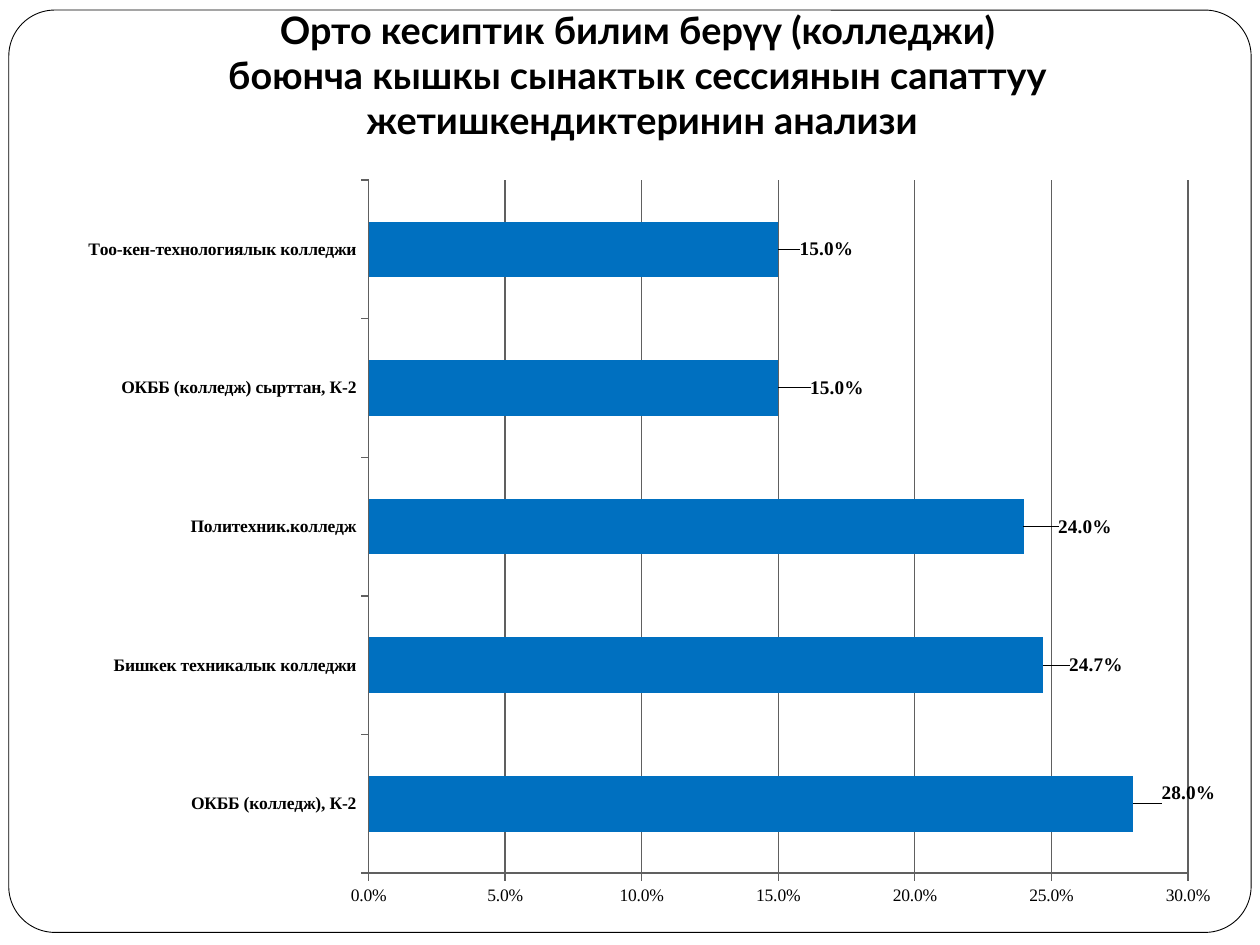
from dataclasses import dataclass

from lxml import etree
from pptx import Presentation
from pptx import util as u
from pptx.chart.data import CategoryChartData
from pptx.dml.color import RGBColor
from pptx.enum import chart as charts, shapes, text
from pptx.oxml.ns import qn

WIDTH, HEIGHT = 10, 7.5
PERCENT = "0.0%"
TITLE = ("Орто кесиптик билим берүү (колледжи)",
         "боюнча кышкы сынактык сессиянын сапаттуу",
         " жетишкендиктеринин анализи")
# College, share, label shift (x, y) as shares of the chart
RESULTS = (
    ("ОКББ (колледж), К-2", 0.28, (0.02, -0.015)),
    ("Бишкек техникалык колледжи", 0.247, (0.018, 0)),
    ("Политехник.колледж", 0.24, (0.025, 0)),
    ("ОКББ (колледж) сырттан, К-2", 0.15, (0.023, 0)),
    ("Тоо-кен-технологиялык колледжи", 0.15, (0.014, 0)),
)


@dataclass(frozen=True)
class Theme:
    ink: RGBColor = RGBColor(0, 0, 0)
    paper: RGBColor = RGBColor(255, 255, 255)
    bar: RGBColor = RGBColor(0x00, 0x70, 0xC0)
    grid: RGBColor = RGBColor(0x60, 0x60, 0x60)
    title_font: str = "Lato"
    chart_font: str = "Times New Roman"
    title_size: float = 21.6
    axis_size: float = 10
    label_size: float = 11


THEME = Theme()


def apply(target, values):
    for name, value in values.items():
        setattr(target, name, value)


def box_at(left, top, width, height):
    return dict(zip(("left", "top", "width", "height"),
                    map(u.Inches, (left, top, width, height))))


def style_font(font, name, size, bold):
    apply(font, {"name": name, "size": u.Pt(size), "bold": bold})
    font.color.rgb = THEME.ink


def style_line(line, color, width):
    line.color.rgb = color
    line.width = u.Pt(width)


def add_frame(slide):
    """Put the rounded border behind everything else."""
    frame = slide.shapes.add_shape(shapes.MSO_SHAPE.ROUNDED_RECTANGLE,
                                   **box_at(0.07, 0.08, 9.86, 7.32))
    frame.adjustments[0] = 0.05
    frame.shadow.inherit = False
    frame.fill.solid()
    frame.fill.fore_color.rgb = THEME.paper
    style_line(frame.line, THEME.ink, 0.5)
    slide.shapes._spTree.insert(2, frame._element)


def set_title(slide):
    title = slide.shapes.title
    apply(title, box_at(0.12, 0.21, 9.88, 1.02))
    box = title.text_frame
    apply(box, {
        "text": "\v".join(TITLE),
        "word_wrap": True,
        "auto_size": text.MSO_AUTO_SIZE.NONE,
        "vertical_anchor": text.MSO_ANCHOR.BOTTOM,
        "margin_left": u.Inches(0.1), "margin_right": u.Inches(0.1),
        "margin_top": u.Inches(0.05), "margin_bottom": u.Inches(0.1),
    })
    para = box.paragraphs[0]
    para.alignment = text.PP_ALIGN.CENTER
    for span in para.runs:
        style_font(span.font, THEME.title_font, THEME.title_size, True)


def manual_layout(**values):
    layout = etree.Element(qn("c:layout"))
    manual = etree.SubElement(layout, qn("c:manualLayout"))
    for name, value in values.items():
        etree.SubElement(manual, qn(f"c:{name}"), val=str(value))
    return layout


def place_plot(chart):
    area = chart._chartSpace.chart.plotArea
    for old in area.findall(qn("c:layout")):
        area.remove(old)
    area.insert(0, manual_layout(layoutTarget="inner", xMode="edge", yMode="edge",
                                 x=0.26, y=0.02, w=0.7, h=0.92))


def style_axis(axis, bold):
    style_font(axis.tick_labels.font, THEME.chart_font, THEME.axis_size, bold)
    style_line(axis.format.line, THEME.grid, 0.75)
    apply(axis, {"major_tick_mark": charts.XL_TICK_MARK.OUTSIDE,
                 "minor_tick_mark": charts.XL_TICK_MARK.NONE})


def label_bars(series):
    """Show each value beside its bar, shifted by the amount in RESULTS."""
    outside = charts.XL_LABEL_POSITION.OUTSIDE_END
    labels = series.data_labels
    apply(labels, {"show_value": True, "number_format": PERCENT,
                   "number_format_is_linked": False, "position": outside})
    style_font(labels.font, THEME.chart_font, THEME.label_size, True)
    for index in range(len(RESULTS)):
        label = series.points[index].data_label
        style_font(label.font, THEME.chart_font, THEME.label_size, True)
        label.position = outside
    for node, (_, _, (x, y)) in zip(series._element.iter(qn("c:dLbl")), RESULTS):
        node.insert(1, manual_layout(x=x, y=y))
        node.insert(2, etree.Element(qn("c:numFmt"), formatCode=PERCENT,
                                     sourceLinked="0"))


def add_results_chart(slide):
    data = CategoryChartData(number_format=PERCENT)
    data.categories = [name for name, _, _ in RESULTS]
    data.add_series("Series 1", [share for _, share, _ in RESULTS])
    place = box_at(0.51, 1.31, 9.29, 5.98)
    chart = slide.shapes.add_chart(charts.XL_CHART_TYPE.BAR_CLUSTERED,
                                   *place.values(), data).chart
    apply(chart, {"has_legend": False, "has_title": False})
    style_font(chart.font, THEME.chart_font, THEME.axis_size, False)
    place_plot(chart)
    style_axis(chart.category_axis, True)
    values = chart.value_axis
    style_axis(values, False)
    apply(values, {"minimum_scale": 0, "maximum_scale": 0.3, "major_unit": 0.05,
                   "has_major_gridlines": True})
    style_line(values.major_gridlines.format.line, THEME.grid, 0.75)
    apply(values.tick_labels, {"number_format": PERCENT,
                               "number_format_is_linked": False})
    plot = chart.plots[0]
    apply(plot, {"gap_width": 150, "vary_by_categories": False})
    series = plot.series[0]
    series.format.fill.solid()
    series.format.fill.fore_color.rgb = THEME.bar
    label_bars(series)


def main():
    deck = Presentation()
    apply(deck, {"slide_width": u.Inches(WIDTH), "slide_height": u.Inches(HEIGHT)})
    page = deck.slides.add_slide(deck.slide_layouts.get_by_name("Title Only"))
    add_frame(page)
    set_title(page)
    add_results_chart(page)
    deck.save("out.pptx")


if __name__ == "__main__":
    main()
